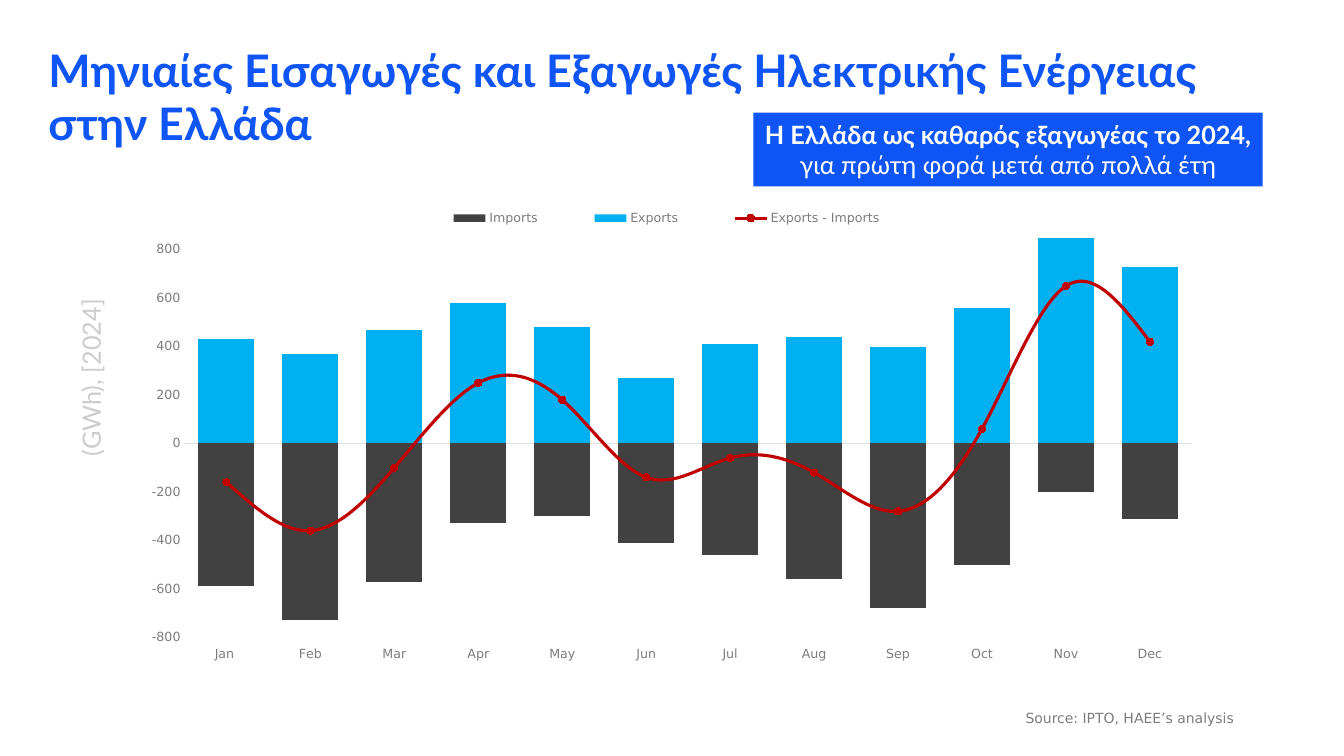
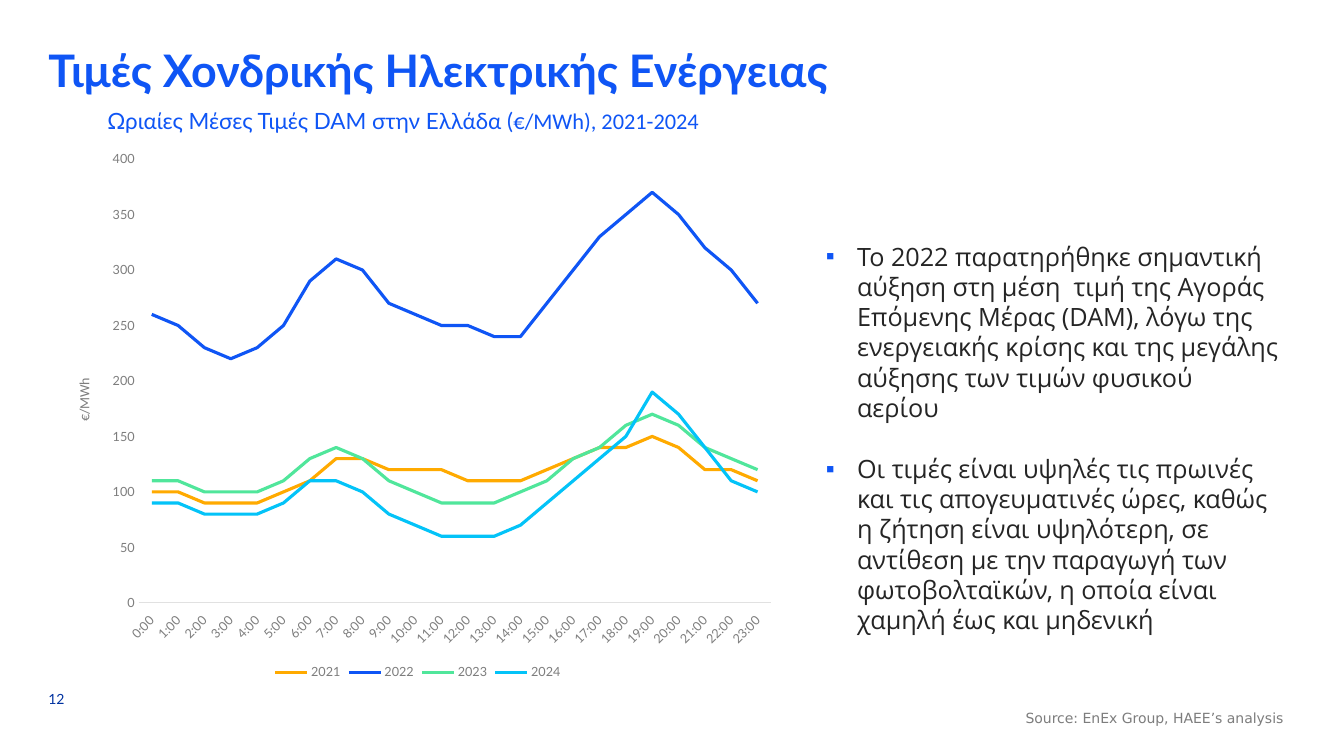
from lxml import etree
from pptx import Presentation
from pptx.chart.data import CategoryChartData
from pptx.dml.color import RGBColor
from pptx.enum.chart import (XL_CHART_TYPE, XL_LEGEND_POSITION, XL_MARKER_STYLE,
                             XL_TICK_LABEL_POSITION, XL_TICK_MARK)
from pptx.enum.shapes import MSO_SHAPE
from pptx.enum.text import MSO_ANCHOR, PP_ALIGN
from pptx.oxml import parse_xml
from pptx.oxml.ns import nsdecls, qn
from pptx.util import Inches, Pt

HUES = {"blue": "0F55F5", "navy": "0032A0", "ink": "252525", "grey": "7D7D7D",
        "pale": "CCCCCC", "rule": "E1E1E1", "white": "FFFFFF", "coal": "414141",
        "sky": "00B0F0", "red": "C00000", "gold": "FFAA00", "mint": "50E69B",
        "aqua": "03C3F8"}
RGB = {name: RGBColor.from_string(code) for name, code in HUES.items()}

deck = Presentation()
deck.slide_width, deck.slide_height = Inches(13.33), Inches(7.5)
COL, ROW = deck.slide_width / 100, deck.slide_height / 100


def area(x, y, w, h):
    """Turn columns and rows of a 100 by 100 grid into slide lengths."""
    return [round(n) for n in (x * COL, y * ROW, w * COL, h * ROW)]


def write(par, runs, size, hue, face="Lato", align=PP_ALIGN.LEFT):
    """Add runs, each a text and whether it is bold."""
    par.alignment = align
    for text, bold in runs:
        run = par.add_run()
        run.text = text
        font = run.font
        font.size, font.bold, font.name = Pt(size), bold, face
        font.color.rgb = RGB[hue]


# Shared title style, set on the master
head = deck.slide_master.placeholders[0]
head.left, head.top, head.width, head.height = area(3.6, 5.6, 92.7, 14.4)
frame = head.text_frame
frame.margin_left = frame.margin_right = frame.margin_top = frame.margin_bottom = 0
frame.vertical_anchor = MSO_ANCHOR.TOP
level = deck.slide_master.element.find(".//" + qn("p:titleStyle"))[0]
level.set("algn", "l")
level.remove(level.find(qn("a:defRPr")))
level.append(parse_xml(
    f'<a:defRPr {nsdecls("a")} sz="3200" b="1"><a:solidFill>'
    f'<a:srgbClr val="{HUES["blue"]}"/></a:solidFill><a:latin typeface="Lato"/></a:defRPr>'))

# Titles and sources
pages = [
    (5, "Μηνιαίες Εισαγωγές και Εξαγωγές Ηλεκτρικής Ενέργειας στην Ελλάδα", "Source: IPTO"),
    (1, "Τιμές Χονδρικής Ηλεκτρικής Ενέργειας", "Source: EnEx Group"),
]
slides = []
for kind, title, source in pages:
    slide = deck.slides.add_slide(deck.slide_layouts[kind])
    slide.shapes.title.text = title
    frame = slide.shapes.add_textbox(*area(74.6, 93.5, 22.5, 3.3)).text_frame
    frame.word_wrap = True
    par = frame.paragraphs[0]
    par.line_spacing = 0.9
    par._p.get_or_add_pPr().set("marL", str(Inches(0.13)))
    write(par, [(source, False), (", HAEE’s analysis", False)], 10, "grey", "DejaVu Sans")
    slides.append(slide)
trade, price = slides

# Chart data
flows = CategoryChartData()
flows.categories = ["Jan ", "Feb", "Mar", "Apr", "May", "Jun",
                    "Jul", "Aug", "Sep", "Oct", "Nov", "Dec"]
flows.add_series("Imports", [-590, -730, -570, -330, -300, -410,
                             -460, -560, -680, -500, -200, -310])
flows.add_series("Exports", [430, 370, 470, 580, 480, 270, 410, 440, 400, 560, 850, 730])
flows.add_series("Exports - Imports", [-160, -360, -100, 250, 180, -140,
                                       -60, -120, -280, 60, 650, 420])
hours = CategoryChartData()
hours.categories = [f"{hour}:00" for hour in range(24)]
hours.add_series("2021", [100, 100, 90, 90, 90, 100, 110, 130, 130, 120, 120, 120,
                          110, 110, 110, 120, 130, 140, 140, 150, 140, 120, 120, 110])
hours.add_series("2022", [260, 250, 230, 220, 230, 250, 290, 310, 300, 270, 260, 250,
                          250, 240, 240, 270, 300, 330, 350, 370, 350, 320, 300, 270])
hours.add_series("2023", [110, 110, 100, 100, 100, 110, 130, 140, 130, 110, 100, 90,
                          90, 90, 100, 110, 130, 140, 160, 170, 160, 140, 130, 120])
hours.add_series("2024", [90, 90, 80, 80, 80, 90, 110, 110, 100, 80, 70, 60,
                          60, 60, 70, 90, 110, 130, 150, 190, 170, 140, 110, 100])

# Charts with their shared axes and legends
plans = [
    (trade, XL_CHART_TYPE.COLUMN_STACKED, (9.7, 24.7, 80.6, 64.1), flows, "DejaVu Sans",
     XL_LEGEND_POSITION.TOP, (-800, 900, 200)),
    (price, XL_CHART_TYPE.LINE, (3.75, 18.9, 54.7, 71.6), hours, "Lato",
     XL_LEGEND_POSITION.BOTTOM, (0, 400, 50)),
]
charts = []
for slide, kind, spot, data, face, side, (low, top, step) in plans:
    chart = slide.shapes.add_chart(kind, *area(*spot), data).chart
    chart.has_title = False
    chart.font.name, chart.font.size = face, Pt(9)
    chart.font.color.rgb = RGB["grey"]
    chart.has_legend = True
    chart.legend.position, chart.legend.include_in_layout = side, False
    chart.plots[0].vary_by_categories = False
    cats, vals = chart.category_axis, chart.value_axis
    for axis in (cats, vals):
        axis.has_major_gridlines = False
        axis.major_tick_mark = axis.minor_tick_mark = XL_TICK_MARK.NONE
    cats.tick_label_position = XL_TICK_LABEL_POSITION.LOW
    cats.format.line.color.rgb, cats.format.line.width = RGB["rule"], Pt(0.75)
    vals.format.line.fill.background()
    vals.minimum_scale, vals.maximum_scale, vals.major_unit = low, top, step
    charts.append(chart)
bars, lines = charts

# Monthly balance: the third series becomes a line on the same axes
plot = bars.plots[0]
plot.gap_width, plot.overlap = 50, 100
for series, hue in zip(plot.series, ("coal", "sky")):
    series.format.fill.solid()
    series.format.fill.fore_color.rgb = RGB[hue]
    series.invert_if_negative = False
group = plot._element
curve = group.findall(qn("c:ser"))[2]
for flag in curve.findall(qn("c:invertIfNegative")):
    curve.remove(flag)
mixed = parse_xml(f'<c:lineChart {nsdecls("c")}><c:grouping val="standard"/>'
                  '<c:varyColors val="0"/><c:marker val="1"/></c:lineChart>')
mixed.insert(2, curve)
for axis in group.findall(qn("c:axId")):
    etree.SubElement(mixed, qn("c:axId")).set("val", axis.get("val"))
group.addnext(mixed)
net = bars.plots[1].series[0]
net.smooth = True
net.format.line.color.rgb, net.format.line.width = RGB["red"], Pt(2.25)
net.marker.style, net.marker.size = XL_MARKER_STYLE.CIRCLE, 5
net.marker.format.fill.solid()
net.marker.format.fill.fore_color.rgb = RGB["red"]
net.marker.format.line.color.rgb = RGB["red"]

# Hourly prices
for series, hue in zip(lines.plots[0].series, ("gold", "blue", "mint", "aqua")):
    series.smooth = False
    series.marker.style = XL_MARKER_STYLE.NONE
    series.format.line.color.rgb, series.format.line.width = RGB[hue], Pt(2.25)
labels = lines.category_axis.tick_labels
labels.font.size = Pt(9)
lines.category_axis._element.find(qn("c:txPr")).find(qn("a:bodyPr")).set("rot", "-2700000")
name = lines.value_axis.axis_title
write(name.text_frame.paragraphs[0], [("€/MWh", False)], 10, "grey", "Calibri", PP_ALIGN.CENTER)

# Parts of the charts, as shares of each chart
parts = [
    (bars._chartSpace.chart.plotArea, 0, {"x": 0.05, "y": 0.08, "w": 0.93, "h": 0.85}),
    (bars.legend._element, 1, {"x": 0.25, "y": 0.04, "w": 0.49, "h": 0.05}),
    (lines._chartSpace.chart.plotArea, 0, {"x": 0.12, "y": 0.03, "w": 0.86, "h": 0.82}),
    (name._element, 1, {"x": 0.03, "y": 0.43}),
]
for part, slot, shares in parts:
    for old in part.findall(qn("c:layout")):
        part.remove(old)
    inner = '<c:layoutTarget val="inner"/>' if slot == 0 else ""
    modes = "".join(f'<c:{key}Mode val="edge"/>' for key in "xy")
    sizes = "".join(f'<c:{key} val="{share}"/>' for key, share in shares.items())
    part.insert(slot, parse_xml(f'<c:layout {nsdecls("c")}><c:manualLayout>{inner}{modes}'
                                f'{sizes}</c:manualLayout></c:layout>'))

# Unit label and callout beside the monthly chart
unit = trade.shapes.add_textbox(*area(-5.85, 47.3, 25.2, 5.3))
unit.rotation = 270
unit.text_frame.word_wrap = True
write(unit.text_frame.paragraphs[0], [("(GWh), [2024]", False)], 18, "pale",
      align=PP_ALIGN.CENTER)
note = trade.shapes.add_shape(MSO_SHAPE.RECTANGLE, *area(56.05, 14.9, 37.9, 9.75))
note.shadow.inherit = False
note.fill.solid()
note.fill.fore_color.rgb = RGB["blue"]
note.line.fill.background()
note.text_frame.word_wrap = True
write(note.text_frame.paragraphs[0],
      [("Η Ελλάδα ως καθαρός εξαγωγέας το 2024, ", True),
       ("για πρώτη φορά μετά από πολλά έτη", False)],
      18, "white", align=PP_ALIGN.CENTER)

# Subtitle, page number and findings beside the hourly chart
sub = price.shapes.add_textbox(*area(6.5, 13.5, 47, 4.9)).text_frame
sub.word_wrap = True
par = sub.paragraphs[0]
write(par, [("Ωριαίες Μέσες Τιμές DAM στην Ελλάδα (", False)], 16, "blue")
write(par, [("€/MWh), 2021-2024", False)], 16, "blue", "Calibri", PP_ALIGN.CENTER)
page = price.shapes.add_textbox(*area(3.6, 91.2, 2.1, 2.3)).text_frame
page.margin_left = page.margin_right = page.margin_top = page.margin_bottom = 0
page.vertical_anchor = MSO_ANCHOR.BOTTOM
write(page.paragraphs[0], [("12", False)], 10, "navy")

body = price.placeholders[1]
body.left, body.top, body.width, body.height = area(60.7, 31.2, 35.2, 53.9)
facts = [
    "Το 2022 παρατηρήθηκε σημαντική αύξηση στη μέση  τιμή της Αγοράς Επόμενης Μέρας (DAM), "
    "λόγω της ενεργειακής κρίσης και της μεγάλης αύξησης των τιμών φυσικού αερίου",
    "Οι τιμές είναι υψηλές τις πρωινές και τις απογευματινές ώρες, καθώς η ζήτηση είναι "
    "υψηλότερη, σε αντίθεση με την παραγωγή των φωτοβολταϊκών, η οποία είναι χαμηλή έως "
    "και μηδενική",
]
for rank, fact in enumerate(facts):
    par = body.text_frame.paragraphs[0] if rank == 0 else body.text_frame.add_paragraph()
    par.space_before = Pt(22 * rank)
    props = par._p.get_or_add_pPr()
    props.set("marL", str(Inches(0.31)))
    props.set("indent", str(-Inches(0.31)))
    tint = etree.SubElement(props, qn("a:buClr"))
    etree.SubElement(tint, qn("a:srgbClr")).set("val", HUES["blue"])
    etree.SubElement(props, qn("a:buChar")).set("char", "▪")
    write(par, [(fact, False)], 18, "ink", "Open Sans")

deck.save("out.pptx")
